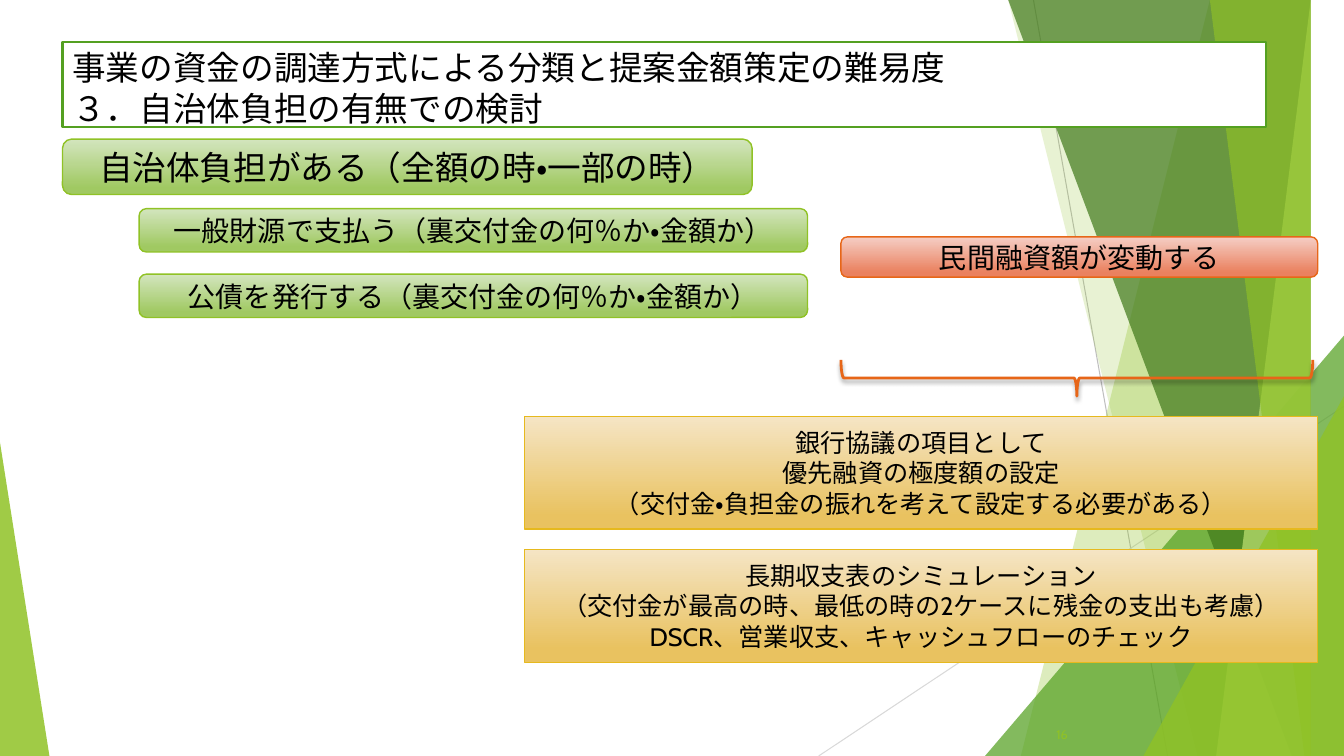
from lxml.etree import SubElement
from pptx import Presentation
from pptx.dml.color import RGBColor
from pptx.enum.lang import MSO_LANGUAGE_ID
from pptx.enum.shapes import MSO_CONNECTOR, MSO_SHAPE
from pptx.enum.text import MSO_ANCHOR, PP_ALIGN
from pptx.oxml.ns import qn
from pptx.util import Inches, Pt

WIDE, HIGH = 13.33, 7.5

THEME = {
    "font": "Cabin",
    "ink": "000000",
    "paper": "FFFFFF",
    "leaf": "90C226",
    "frame": "54A021",
    "large": 24, "medium": 20, "small": 18, "tiny": 9,
    "green": ("D3E5BE", "A0C962", "90C226"),
    "red": ("F5CEC5", "EA815F", "E76618"),
    "gold": ("F5E5C5", "E9C260", "E6B91E"),
}

# Thin lines: start, end, colour
RAYS = [
    ((10.25, 0), (11.58, HIGH), "BFBFBF"),
    ((WIDE, 4.03), (8.12, HIGH), "D9D9D9"),
]

# Bands reach the right edge: top x, bottom x, colour, opacity
# Wedges stand on the bottom edge: left, top, width, tip, colour, opacity
DECOR = [
    ("band", 12.28, 10.04, "90C226", 30),
    ("band", 10.5, 11.83, "90C226", 20),
    ("wedge", 9.77, 3.33, 3.56, 1, "54A021", 72),
    ("band", 10.21, 12.91, "3F7819", 70),
    ("band", 13.03, 11.92, "C0E474", 70),
    ("band", 11.96, 13.18, "90C226", 65),
    ("wedge", 11.34, 3.93, 1.99, 1, "90C226", 80),
    ("wedge", 0, 4.39, 0.49, 0, "90C226", 85),
]

TITLE = "事業の資金の調達方式による分類と提案金額策定の難易度\v３．自治体負担の有無での検討"
PAGE = "16"

LEFT, STEP, RIGHT = 0.62, 1.38, 13.07
FORK, NOTE = 8.34, 5.2

# Kind, place, palette, size, lines
BOXES = [
    ("round", (LEFT, 1.38, 6.84, 0.55), "green", "large",
     ["自治体負担がある（全額の時・一部の時）"]),
    ("round", (STEP, 2.07, 6.63, 0.43), "green", "medium",
     ["一般財源で支払う（裏交付金の何％か・金額か）"]),
    ("round", (FORK, 2.35, RIGHT - FORK, 0.4), "red", "medium",
     ["民間融資額が変動する"]),
    ("round", (STEP, 2.72, 6.63, 0.43), "green", "medium",
     ["公債を発行する（裏交付金の何％か・金額か）"]),
    ("plain", (NOTE, 4.13, RIGHT - NOTE, 1.12), "gold", "small",
     ["銀行協議の項目として",
      "優先融資の極度額の設定",
      "（交付金・負担金の振れを考えて設定する必要がある）"]),
    ("plain", (NOTE, 5.45, RIGHT - NOTE, 1.12), "gold", "small",
     ["長期収支表のシミュレーション",
      "（交付金が最高の時、最低の時の2ケースに残金の支出も考慮）",
      "DSCR、営業収支、キャッシュフローのチェック"]),
]
KINDS = {"round": MSO_SHAPE.ROUNDED_RECTANGLE, "plain": MSO_SHAPE.RECTANGLE}


def rgb(code):
    return RGBColor.from_string(code)


def paint(shape, code, share=100):
    """Fill with one colour at the given opacity in percent."""
    shape.fill.solid()
    shape.fill.fore_color.rgb = rgb(code)
    if share < 100:
        tone = shape.fill._xPr.find(qn("a:solidFill"))[0]
        SubElement(tone, qn("a:alpha"), val=str(share * 1000))


def blend(shape, top, low):
    """Fill with a gradient running downwards."""
    shape.fill.gradient()
    shape.fill.gradient_angle = 270
    stops = shape.fill.gradient_stops
    for stop, code, spot in zip(stops, (top, low), (0, 0.88)):
        stop.color.rgb = rgb(code)
        stop.position = spot


def edge(shape, code, width):
    shape.line.color.rgb = rgb(code)
    shape.line.width = Pt(width)


def add(slide, kind, place):
    shape = slide.shapes.add_shape(kind, *map(Inches, place))
    shape.shadow.inherit = False
    return shape


def write(shape, lines, size, code, align, anchor):
    frame = shape.text_frame
    frame.word_wrap = True
    frame.vertical_anchor = anchor
    frame.text = "\n".join(lines)
    form = {"name": THEME["font"], "size": Pt(THEME[size]),
            "language_id": MSO_LANGUAGE_ID.JAPANESE}
    for para in frame.paragraphs:
        para.alignment = align
        para.font.size = form["size"]
        for run in para.runs:
            for key, value in form.items():
                setattr(run.font, key, value)
            run.font.color.rgb = rgb(THEME[code])


def draw_rays(slide):
    for start, end, code in RAYS:
        ray = slide.shapes.add_connector(
            MSO_CONNECTOR.STRAIGHT, *map(Inches, start + end))
        edge(ray, code, 0.75)
        SubElement(ray._element.spPr, qn("a:effectLst"))


def draw_decor(slide):
    for kind, *place, code, share in DECOR:
        if kind == "band":
            top, low = place
            pen = slide.shapes.build_freeform(top, 0, scale=Inches(1))
            pen.add_line_segments([(WIDE, 0), (WIDE, HIGH), (low, HIGH)])
            shape = pen.convert_to_shape()
            shape.shadow.inherit = False
        else:
            left, top, width, tip = place
            shape = add(slide, MSO_SHAPE.ISOSCELES_TRIANGLE,
                        (left, top, width, HIGH - top))
            shape.adjustments[0] = tip
        paint(shape, code, share)
        shape.line.fill.background()


def draw_title(slide):
    shape = add(slide, MSO_SHAPE.RECTANGLE, (LEFT, 0.42, 11.94, 0.84))
    paint(shape, THEME["paper"])
    edge(shape, THEME["frame"], 1.5)
    write(shape, [TITLE], "large", "ink", PP_ALIGN.LEFT, MSO_ANCHOR.TOP)


def draw_boxes(slide):
    for kind, place, hue, size, lines in BOXES:
        top, low, line = THEME[hue]
        shape = add(slide, KINDS[kind], place)
        blend(shape, top, low)
        edge(shape, line, 1)
        write(shape, lines, size, "ink", PP_ALIGN.CENTER, MSO_ANCHOR.MIDDLE)


def draw_brace(slide):
    brace = add(slide, MSO_SHAPE.RIGHT_BRACE, (10.5, 1.41, 0.36, 4.68))
    brace.rotation = 90
    brace.fill.background()
    edge(brace, THEME["red"][2], 2)
    effect = brace._element.spPr.find(qn("a:effectLst"))
    shade = SubElement(effect, qn("a:outerShdw"), blurRad=str(Pt(3)),
                       dist=str(Pt(2)), dir="5400000", rotWithShape="0")
    tone = SubElement(shade, qn("a:srgbClr"), val=THEME["ink"])
    SubElement(tone, qn("a:alpha"), val="35000")


def draw_page(slide):
    box = slide.shapes.add_textbox(*map(Inches, (10.01, 7.09, 0.68, 0.4)))
    write(box, [PAGE], "tiny", "leaf", PP_ALIGN.RIGHT, MSO_ANCHOR.MIDDLE)


def main():
    deck = Presentation()
    deck.slide_width, deck.slide_height = Inches(WIDE), Inches(HIGH)
    slide = deck.slides.add_slide(deck.slide_layouts[6])
    for draw in (draw_rays, draw_decor, draw_title, draw_boxes,
                 draw_brace, draw_page):
        draw(slide)
    deck.save("out.pptx")


if __name__ == "__main__":
    main()
